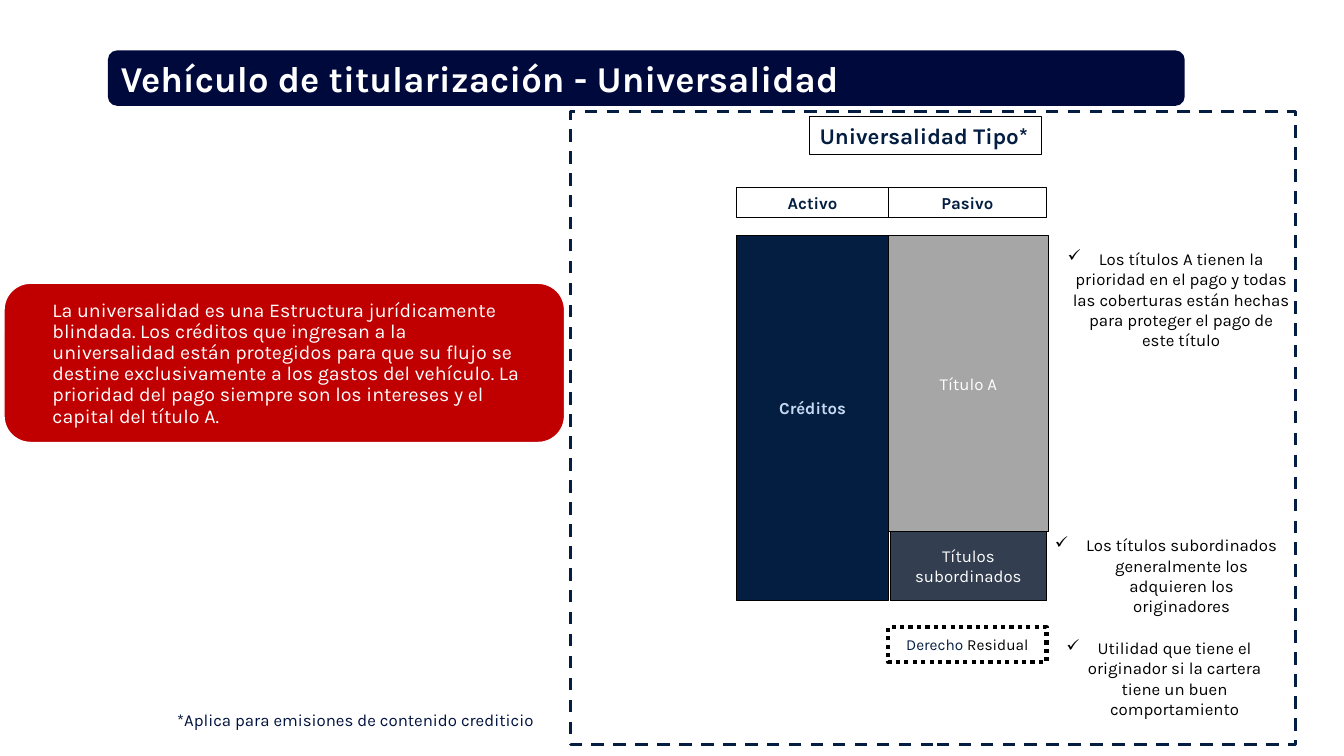
from lxml.etree import SubElement
from pptx import Presentation
from pptx.dml.color import RGBColor
from pptx.enum.dml import MSO_LINE
from pptx.enum.shapes import MSO_SHAPE
from pptx.enum.text import MSO_ANCHOR, MSO_AUTO_SIZE, PP_ALIGN
from pptx.oxml.ns import qn
from pptx.util import Inches, Pt

FONT = "Karla"
COLORS = {
    "title": "00093C", "navy": "041E42", "footnote": "00123F",
    "gray": "A6A6A6", "slate": "333F50", "red": "C00000",
    "pale": "C6D9F1", "white": "FFFFFF", "black": "000000",
}


def rgb(name):
    return RGBColor.from_string(COLORS[name])


def add_box(slide, at, fill=None, line=None, width=0.75, dash=None,
            kind=MSO_SHAPE.RECTANGLE):
    s = slide.shapes.add_shape(kind, *map(Inches, at))
    s.shadow.inherit = False
    if fill:
        s.fill.solid()
        s.fill.fore_color.rgb = rgb(fill)
    else:
        s.fill.background()
    if line:
        s.line.color.rgb = rgb(line)
        s.line.width = Pt(width)
        if dash:
            s.line.dash_style = dash
    else:
        s.line.fill.background()
    return s


def add_bullet(p, char, indent):
    pPr = p._p.get_or_add_pPr()
    pPr.set("marL", str(Inches(indent)))
    pPr.set("indent", str(-Inches(indent)))
    SubElement(pPr, qn("a:buChar")).set("char", char)


def write(s, paragraphs, size=12, bold=False, align=PP_ALIGN.CENTER,
          bullet=None, spacing=None, **frame):
    """Fill a shape; each paragraph is a list of (text, colour) runs."""
    tf = s.text_frame
    settings = {"word_wrap": True, "vertical_anchor": MSO_ANCHOR.MIDDLE, **frame}
    for name, value in settings.items():
        setattr(tf, name, value)
    for i, runs in enumerate(paragraphs):
        p = tf.add_paragraph() if i else tf.paragraphs[0]
        p.alignment = align
        if spacing:
            p.line_spacing = spacing
        if bullet:
            add_bullet(p, bullet, 0.31)
        for text, color in runs:
            r = p.add_run()
            r.text = text
            for name, value in {"name": FONT, "size": Pt(size), "bold": bold}.items():
                setattr(r.font, name, value)
            r.font.color.rgb = rgb(color)


def add_label(slide, at, text, size=12, align=PP_ALIGN.CENTER):
    s = add_box(slide, at, line="black")
    write(s, [[(text, "navy")]], size, True, align,
          vertical_anchor=MSO_ANCHOR.TOP,
          auto_size=MSO_AUTO_SIZE.SHAPE_TO_FIT_TEXT)


def add_text(slide, at, text, color="black", **options):
    s = slide.shapes.add_textbox(*map(Inches, at))
    write(s, [[(text, color)]], **options)


def main():
    prs = Presentation()
    prs.slide_width, prs.slide_height = Inches(13.33), Inches(7.5)
    slide = prs.slides.add_slide(prs.slide_layouts[6])
    left = PP_ALIGN.LEFT
    growing = {"vertical_anchor": MSO_ANCHOR.TOP,
               "auto_size": MSO_AUTO_SIZE.SHAPE_TO_FIT_TEXT}

    # Title bar
    s = add_box(slide, (1.07, 0.5, 10.68, 0.55), "title",
                kind=MSO_SHAPE.ROUNDED_RECTANGLE)
    write(s, [[("Vehículo de titularización - Universalidad", "white")]],
          26, True, left)

    # Dashed frame and headings
    add_box(slide, (5.66, 1.11, 7.19, 6.28), line="navy", width=2.25,
            dash=MSO_LINE.DASH)
    add_label(slide, (8.03, 1.16, 2.3, 0.37), "Universalidad Tipo*", 16, left)
    add_label(slide, (7.31, 1.86, 1.5, 0.3), "Activo")
    add_label(slide, (8.81, 1.86, 1.57, 0.3), "Pasivo")

    # Balance sheet blocks
    s = add_box(slide, (8.81, 2.34, 1.59, 2.93), "gray", "black")
    write(s, [[("Título A", "white")]], word_wrap=False)
    s = add_box(slide, (7.31, 2.34, 1.5, 3.62), "navy", "black")
    write(s, [[("Créditos", "pale")]], bold=True, word_wrap=False,
          margin_bottom=Inches(0.25))
    s = add_box(slide, (8.83, 5.27, 1.55, 0.69), "slate", "black")
    write(s, [[("Títulos", "white")], [("subordinados", "white")]],
          word_wrap=False)
    s = add_box(slide, (8.81, 6.22, 1.57, 0.35), line="black", width=3,
                dash=MSO_LINE.ROUND_DOT)
    write(s, [[("Derecho", "navy"), (" Residual", "black")]], 11,
          word_wrap=False)

    # Checked notes
    notes = [
        ((10.22, 2.42, 2.68, 1.11),
         "Los títulos A tienen la prioridad en el pago y todas las coberturas "
         "están hechas para proteger el pago de este título"),
        ((10.33, 5.26, 2.47, 0.91),
         "Los títulos subordinados generalmente los adquieren los originadores"),
        ((10.19, 6.28, 2.61, 0.71),
         "Utilidad que tiene el originador si la cartera tiene un buen "
         "comportamiento"),
    ]
    for at, text in notes:
        add_text(slide, at, text, bullet="✓", **growing)

    # Red message
    add_box(slide, (0.04, 2.81, 5.56, 1.58), "red", "white", 1,
            kind=MSO_SHAPE.ROUNDED_RECTANGLE)
    sides = ("left", "top", "right", "bottom")
    add_text(slide, (0.43, 3.16, 4.82, 0.9),
             "La universalidad es una Estructura jurídicamente blindada. Los "
             "créditos que ingresan a la universalidad están protegidos para "
             "que su flujo se destine exclusivamente a los gastos del vehículo. "
             "La prioridad del pago siempre son los intereses y el capital del "
             "título A.", "white", size=14, align=left, spacing=0.9,
             **{f"margin_{side}": Inches(0.09) for side in sides})

    # Footnote
    add_text(slide, (1.66, 6.99, 3.77, 0.3),
             "*Aplica para emisiones de contenido crediticio", "footnote",
             align=left, **growing)

    prs.save("out.pptx")


if __name__ == "__main__":
    main()
